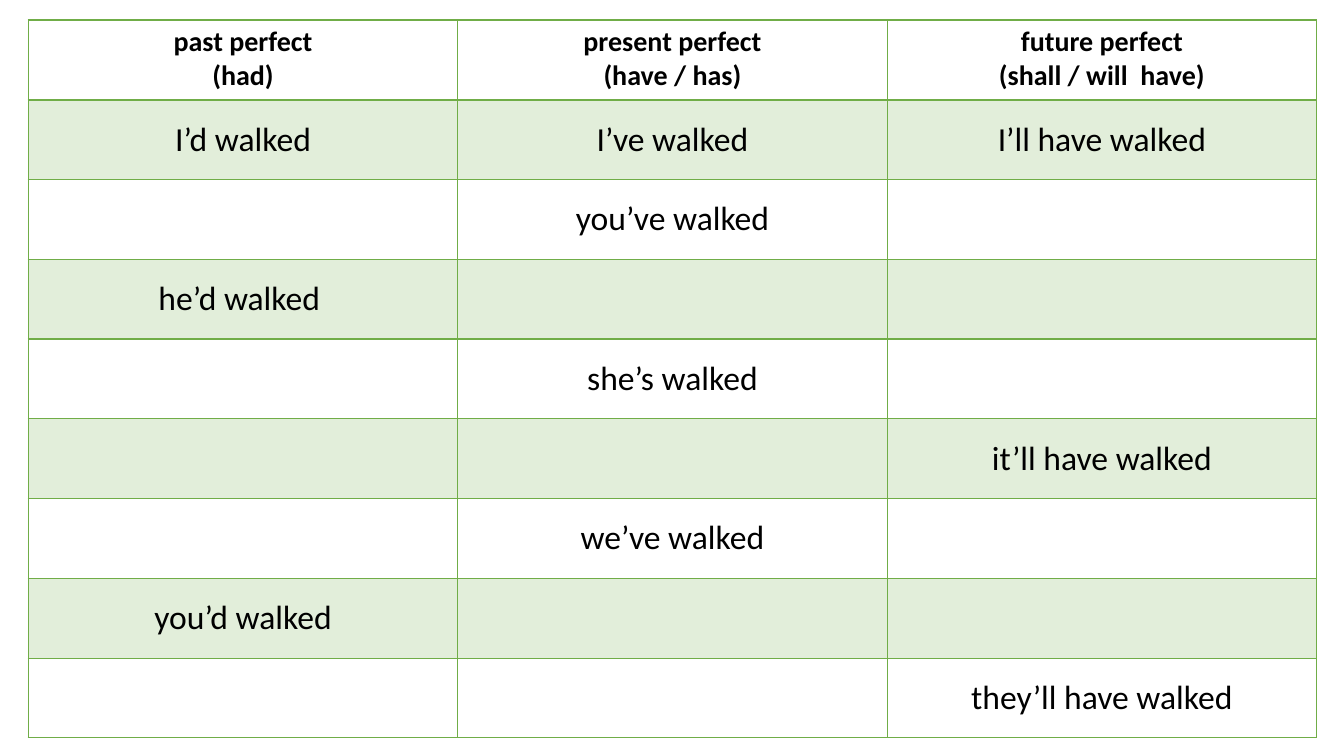
from typing import NamedTuple

from lxml import etree
from pptx import Presentation
from pptx.dml.color import RGBColor
from pptx.enum.text import MSO_ANCHOR, PP_ALIGN
from pptx.oxml.ns import qn
from pptx.table import _Cell
from pptx.util import Emu, Pt

CENTER = PP_ALIGN.CENTER
TOP = MSO_ANCHOR.TOP
MIDDLE = MSO_ANCHOR.MIDDLE

GREEN = RGBColor(0x70, 0xAD, 0x47)
BLACK = RGBColor(0x00, 0x00, 0x00)
BAND_ALPHA = 20000
FONT = "Calibri"

SLIDE_WIDTH, SLIDE_HEIGHT = 1280, 720
TABLE_LEFT, TABLE_TOP = 27, 19
COLUMN_WIDTH, ROW_HEIGHT = 409, 76


class RowStyle(NamedTuple):
    size: int
    bold: bool
    anchor: MSO_ANCHOR
    banded: bool
    top_border: int
    bottom_border: int


class TenseRow(NamedTuple):
    past: str
    present: str
    future: str


HEADING = RowStyle(20, True, TOP, False, 1, 2)
FIRST_FORM = RowStyle(24, False, MIDDLE, True, 2, 1)
BANDED_FORM = RowStyle(24, False, MIDDLE, True, 1, 1)
PLAIN_FORM = RowStyle(24, False, MIDDLE, False, 1, 1)

TENSES = [
    TenseRow(
        "past perfect\n(had)",
        "present perfect\n(have / has)",
        "future perfect\n(shall / will  have)",
    ),
    TenseRow("I’d walked", "I’ve walked", "I’ll have walked"),
    TenseRow("", "you’ve walked", ""),
    TenseRow("he’d walked ", "", ""),
    TenseRow("", "she’s walked", ""),
    TenseRow("", "", "it’ll have walked"),
    TenseRow("", "we’ve walked", ""),
    TenseRow("you’d walked", "", ""),
    TenseRow("", "", "they’ll have walked"),
]


def px(length: int) -> Emu:
    return Emu(length * 9525)


def row_style(index: int) -> RowStyle:
    if index == 0:
        return HEADING
    if index == 1:
        return FIRST_FORM
    return BANDED_FORM if index % 2 else PLAIN_FORM


def draw_borders(cell: _Cell, style: RowStyle) -> None:
    properties = cell._tc.get_or_add_tcPr()
    widths = {"L": 1, "R": 1, "T": style.top_border, "B": style.bottom_border}
    for side, width in widths.items():
        border = etree.SubElement(properties, qn(f"a:ln{side}"), w=str(Pt(width)))
        fill = etree.SubElement(border, qn("a:solidFill"))
        etree.SubElement(fill, qn("a:srgbClr"), val=str(GREEN))


def fill_band(cell: _Cell, banded: bool) -> None:
    if not banded:
        cell.fill.background()
        return
    cell.fill.solid()
    cell.fill.fore_color.rgb = GREEN
    band_color = cell._tc.tcPr.find(f"{qn('a:solidFill')}/{qn('a:srgbClr')}")
    etree.SubElement(band_color, qn("a:alpha"), val=str(BAND_ALPHA))


def write_form(cell: _Cell, form: str, style: RowStyle) -> None:
    cell.text = form
    cell.vertical_anchor = style.anchor
    for paragraph in cell.text_frame.paragraphs:
        paragraph.alignment = CENTER
        paragraph.font.name = FONT
        paragraph.font.size = Pt(style.size)
        paragraph.font.bold = style.bold
        paragraph.font.color.rgb = BLACK


def main() -> None:
    presentation = Presentation()
    presentation.slide_width = px(SLIDE_WIDTH)
    presentation.slide_height = px(SLIDE_HEIGHT)
    slide = presentation.slides.add_slide(presentation.slide_layouts[6])

    row_count, column_count = len(TENSES), len(TenseRow._fields)
    tense_table = slide.shapes.add_table(
        row_count,
        column_count,
        px(TABLE_LEFT),
        px(TABLE_TOP),
        px(COLUMN_WIDTH * column_count),
        px(ROW_HEIGHT * row_count),
    ).table
    tense_table.first_row = False
    tense_table.horz_banding = False

    for row_index, forms in enumerate(TENSES):
        style = row_style(row_index)
        for column_index, form in enumerate(forms):
            cell = tense_table.cell(row_index, column_index)
            draw_borders(cell, style)
            fill_band(cell, style.banded)
            write_form(cell, form, style)

    presentation.save("out.pptx")


if __name__ == "__main__":
    main()
